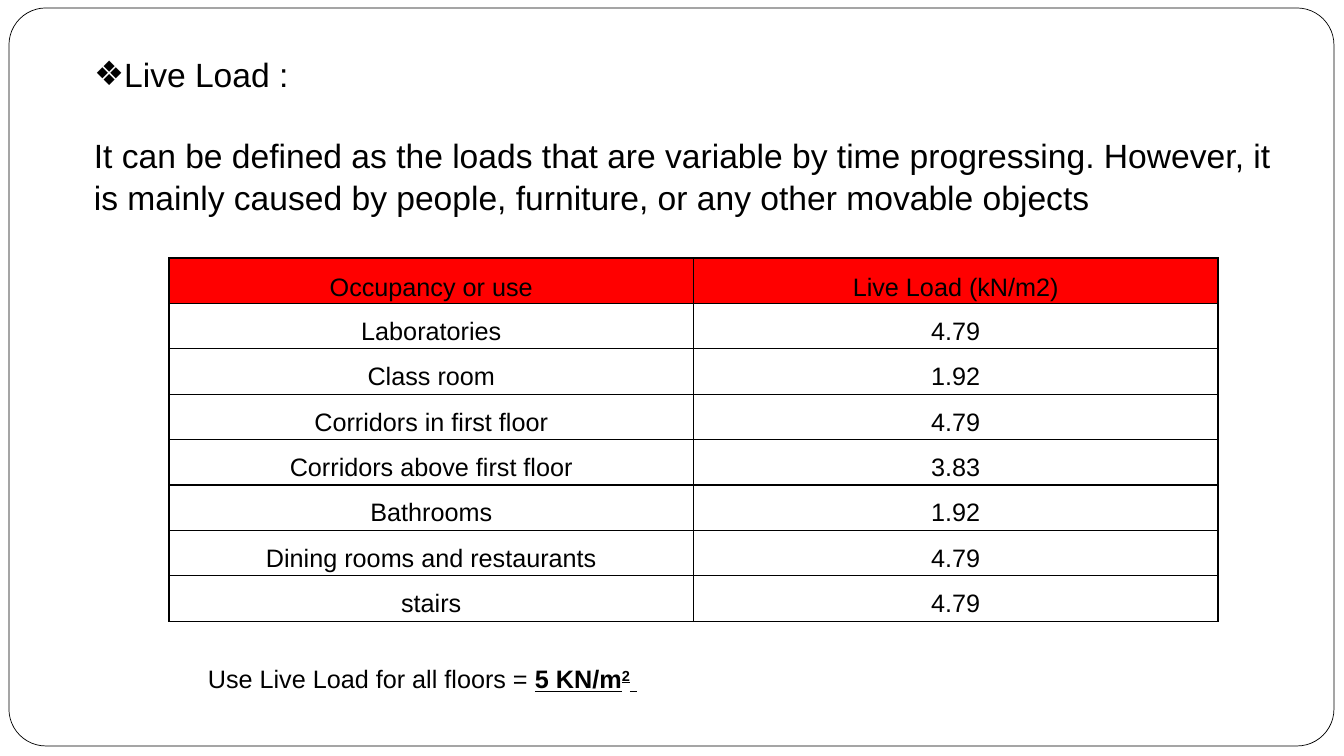
"""Build the live load slide: definition, load table and design value."""
from lxml.etree import SubElement
from pptx import Presentation
from pptx.dml.color import RGBColor
from pptx.enum.shapes import MSO_SHAPE as Shape
from pptx.enum.text import MSO_ANCHOR as Anchor, PP_ALIGN as Align
from pptx.oxml.ns import qn
from pptx.util import Emu, Pt

TITLE = "Live Load :"
DEFINITION = (
    "It can be defined as the loads that are variable by time progressing. "
    "However, it is mainly caused by people, furniture, or any other movable objects"
)
LOADS = [
    ("Occupancy or use", "Live Load (kN/m2)"),
    ("Laboratories", "4.79"),
    ("Class room", "1.92"),
    ("Corridors in first floor", "4.79"),
    ("Corridors above first floor", "3.83"),
    ("Bathrooms", "1.92"),
    ("Dining rooms and restaurants", "4.79"),
    ("stairs", "4.79"),
]
STRONG = {"bold": True, "underline": True}
DESIGN_VALUE = [
    ("Use Live Load for all floors = ", {}, 0),
    ("5 KN/m", STRONG, 0),
    ("2", STRONG, 30000),
    (" ", {"underline": True}, 0),
]
COLORS = {"text": "000000", "line": "000000", "paper": "FFFFFF", "header": "FF0000"}
BOXES = {
    "slide": (0, 0, 1344, 756),
    "frame": (9, 8, 1325, 738),
    "title": (84, 47, 1202, 50),
    "definition": (84, 128, 1202, 92),
    "table": (169, 258, 1049, 363),
    "design value": (198, 657, 496, 41),
}
PX = 914400 / 100.8
CELL_INSET = 7


def px(length):
    return Emu(round(length * PX))


def box(name):
    return [px(length) for length in BOXES[name]]


def color(name):
    return RGBColor.from_string(COLORS[name])


def apply(target, values):
    for name, value in values.items():
        setattr(target, name, value)


def write(paragraph, text, size, **values):
    run = paragraph.add_run()
    run.text = text
    apply(run.font, {"name": "Arial", "size": Pt(size), **values})
    run.font.color.rgb = color("text")
    return run


def add_frame(slide):
    frame = slide.shapes.add_shape(Shape.ROUNDED_RECTANGLE, *box("frame"))
    frame.adjustments[0] = 0.05
    frame.shadow.inherit = False
    frame.fill.solid()
    frame.fill.fore_color.rgb = color("paper")
    frame.line.color.rgb = color("line")
    frame.line.width = Pt(0.5)


def add_title(slide):
    title = slide.shapes.title
    apply(title, dict(zip(("left", "top", "width", "height"), box("title"))))
    title.text_frame.vertical_anchor = Anchor.TOP
    paragraph = title.text_frame.paragraphs[0]
    apply(paragraph, {"alignment": Align.LEFT, "line_spacing": 1.05})
    write(paragraph, TITLE, 24)
    properties = paragraph._p.get_or_add_pPr()
    properties.set("marL", "0")
    properties.set("indent", "0")
    SubElement(properties, qn("a:buFont"), typeface="Arial")
    SubElement(properties, qn("a:buChar"), char="❖")
    slide.shapes._spTree.append(title._element)


def add_text(slide, name, size, runs):
    frame = slide.shapes.add_textbox(*box(name)).text_frame
    frame.word_wrap = True
    paragraph = frame.paragraphs[0]
    paragraph.line_spacing = 1.05
    for text, values, baseline in runs:
        run = write(paragraph, text, size, **values)
        if baseline:
            run.font._element.set("baseline", str(baseline))


def format_cell(cell, text, is_header):
    apply(cell, {
        "margin_left": px(CELL_INSET), "margin_right": px(CELL_INSET),
        "margin_top": 0, "margin_bottom": 0,
        "vertical_anchor": Anchor.MIDDLE if is_header else Anchor.TOP,
    })
    paragraph = cell.text_frame.paragraphs[0]
    apply(paragraph, {"alignment": Align.CENTER, "line_spacing": 1.5, "space_after": Pt(6)})
    write(paragraph, text, 18, bold=False)
    properties = cell._tc.get_or_add_tcPr()
    for side in ("lnL", "lnR", "lnT", "lnB"):
        border = SubElement(properties, qn(f"a:{side}"), w=str(Pt(1)))
        SubElement(SubElement(border, qn("a:solidFill")), qn("a:srgbClr"), val=COLORS["line"])
    cell.fill.solid()
    cell.fill.fore_color.rgb = color("header" if is_header else "paper")


def add_load_table(slide):
    table = slide.shapes.add_table(len(LOADS), len(LOADS[0]), *box("table")).table
    for row, texts in enumerate(LOADS):
        for column, text in enumerate(texts):
            format_cell(table.cell(row, column), text, row == 0)


def main():
    presentation = Presentation()
    presentation.slide_width, presentation.slide_height = box("slide")[2:]
    slide = presentation.slides.add_slide(presentation.slide_layouts[5])
    add_frame(slide)
    add_title(slide)
    add_text(slide, "definition", 24, [(DEFINITION, {}, 0)])
    add_load_table(slide)
    add_text(slide, "design value", 18, DESIGN_VALUE)
    presentation.save("out.pptx")


if __name__ == "__main__":
    main()
